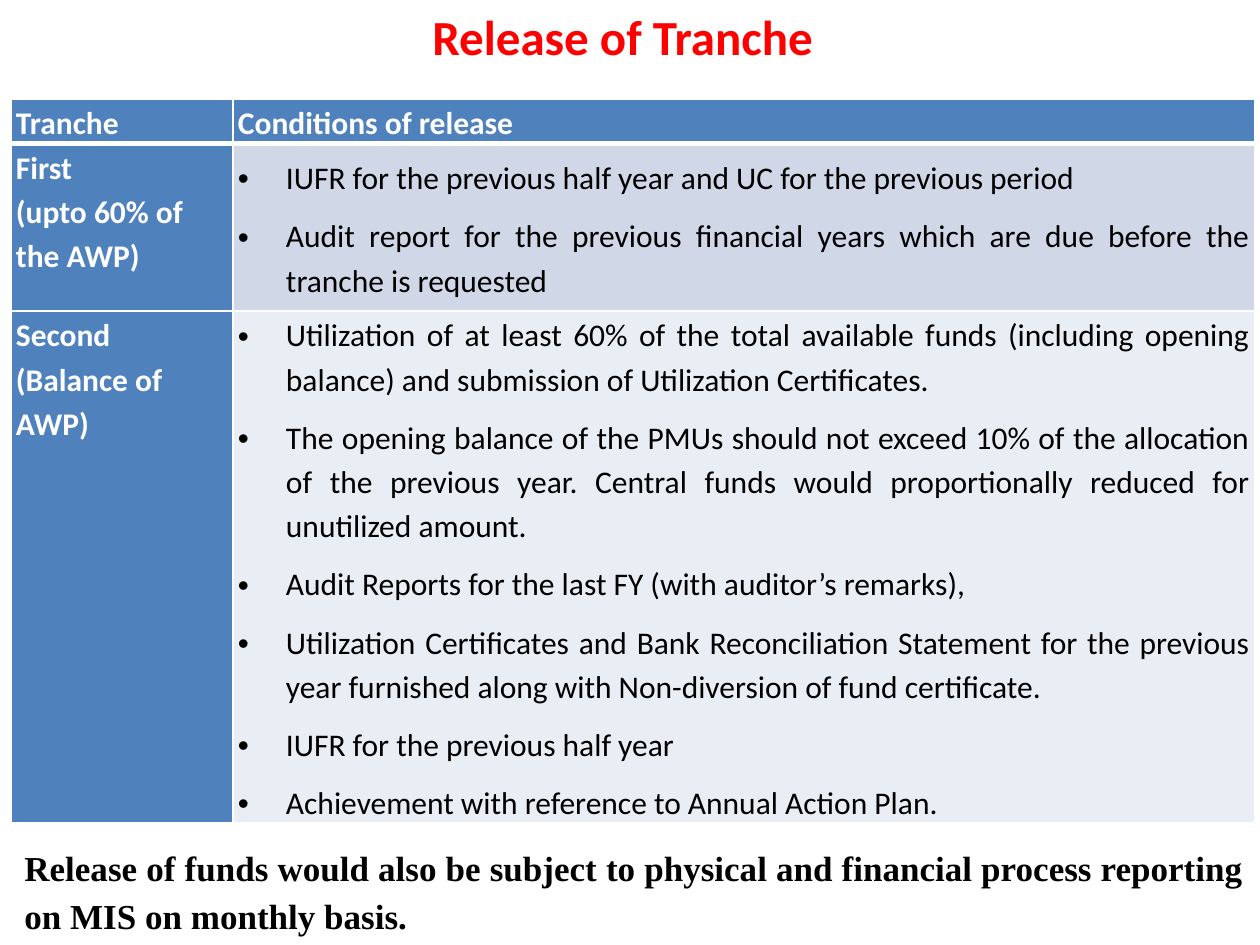
from dataclasses import dataclass
from typing import Any

from lxml.etree import SubElement
from pptx import Presentation
from pptx.dml.color import RGBColor
from pptx.enum.text import MSO_ANCHOR as Anchor, MSO_AUTO_SIZE as AutoSize, PP_ALIGN as Align
from pptx.oxml.ns import qn
from pptx.util import Emu, Pt

EMU_PER_PX = 914400 / 126


def px(length):
    return Emu(round(length * EMU_PER_PX))


def color(value):
    return RGBColor.from_string(value)


def apply(target, values):
    for name, value in values.items():
        setattr(target, name, value)


@dataclass
class TrancheSlide:
    slide: Any
    heading_font: str = "Calibri"
    note_font: str = "Times New Roman"
    header_fill: str = "4F81BD"
    white: str = "FFFFFF"
    black: str = "000000"
    red: str = "FF0000"

    def paragraphs(self, frame, lines, font, ink, layout, bullet=False):
        for index, line in enumerate(lines):
            para = frame.paragraphs[0] if index == 0 else frame.add_paragraph()
            apply(para, layout)
            if bullet:
                self.bullet(para)
            run = para.add_run()
            run.text = line
            apply(run.font, font)
            run.font.color.rgb = color(ink)

    def bullet(self, para):
        properties = para._p.get_or_add_pPr()
        properties.set("marL", str(px(48)))
        properties.set("indent", str(-px(48)))
        SubElement(properties, qn("a:buFont"), typeface="Arial")
        SubElement(properties, qn("a:buChar"), char="•")

    def title(self, text, left, top, width, height):
        heading = self.slide.shapes.title
        apply(heading, dict(left=px(left), top=px(top), width=px(width), height=px(height)))
        apply(heading.text_frame, dict(
            word_wrap=True, auto_size=AutoSize.NONE, vertical_anchor=Anchor.TOP))
        self.paragraphs(heading.text_frame, [text],
                        dict(name=self.heading_font, size=Pt(28), bold=True),
                        self.red, dict(alignment=Align.CENTER))

    def note(self, text, left, top, width, height):
        frame = self.slide.shapes.add_textbox(
            px(left), px(top), px(width), px(height)).text_frame
        apply(frame, dict(word_wrap=True, auto_size=AutoSize.SHAPE_TO_FIT_TEXT))
        self.paragraphs(frame, [text], dict(name=self.note_font, size=Pt(20), bold=True),
                        self.black, dict(alignment=Align.JUSTIFY, line_spacing=1.15))

    def borders(self, cell, widths):
        properties = cell._tc.get_or_add_tcPr()
        for side, width in widths.items():
            line = SubElement(properties, qn(f"a:ln{side}"), w=str(Pt(width)))
            fill = SubElement(line, qn("a:solidFill"))
            SubElement(fill, qn("a:srgbClr"), val=self.white)

    def cell(self, cell, lines, fill, ink, bold, layout, widths, anchor, bullet):
        apply(cell, dict(margin_left=px(5), margin_right=px(5), margin_top=0,
                         margin_bottom=0, vertical_anchor=anchor))
        self.borders(cell, widths)
        cell.fill.solid()
        cell.fill.fore_color.rgb = color(fill)
        self.paragraphs(cell.text_frame, lines,
                        dict(name=self.heading_font, size=Pt(18), bold=bold),
                        ink, layout, bullet)

    def table(self, rows, fills, left, top, widths, heights):
        grid = self.slide.shapes.add_table(
            len(rows), len(widths), px(left), px(top),
            px(sum(widths)), px(sum(heights))).table
        for column, width in zip(grid.columns, widths):
            column.width = px(width)
        for row, height in zip(grid.rows, heights):
            row.height = px(height)
        justified = dict(alignment=Align.JUSTIFY, line_spacing=1.15, space_after=Pt(8))
        for r, row in enumerate(rows):
            sides = dict(L=1, R=1, T=3 if r == 1 else 1, B=3 if r == 0 else 1)
            for c, lines in enumerate(row):
                is_condition = r > 0 and c == 1
                is_label = r > 0 and c == 0
                self.cell(
                    grid.cell(r, c), lines,
                    fill=fills[r - 1] if is_condition else self.header_fill,
                    ink=self.black if is_condition else self.white,
                    bold=not is_condition,
                    layout=dict(line_spacing=1.15) if is_label else justified,
                    widths=sides,
                    anchor=Anchor.MIDDLE if is_condition and r == 1 else Anchor.TOP,
                    bullet=is_condition)


TRANCHES = [
    (["Tranche"], ["Conditions of release"]),
    (["First", "(upto 60% of the AWP)"], [
        "IUFR for the previous half year and UC for the previous period",
        "Audit report for the previous financial years which are due before the "
        "tranche is requested",
    ]),
    (["Second (Balance of AWP)"], [
        "Utilization of at least 60% of the total available funds (including opening "
        "balance) and submission of Utilization Certificates.",
        "The opening balance of the PMUs should not exceed 10% of the allocation of the "
        "previous year. Central funds would proportionally reduced for unutilized amount.",
        "Audit Reports for the last FY (with auditor’s remarks),",
        "Utilization Certificates and Bank Reconciliation Statement for the previous "
        "year furnished along with Non-diversion of fund certificate.",
        "IUFR for the previous half year",
        "Achievement with reference to Annual Action Plan.",
    ]),
]


def main():
    deck = Presentation()
    apply(deck, dict(slide_width=px(1260), slide_height=px(945)))
    page = TrancheSlide(deck.slides.add_slide(deck.slide_layouts[5]))
    page.table(TRANCHES, ["D0D8E8", "E9EDF4"], 11, 99, [222, 1022], [43, 168, 511])
    page.note("Release of funds would also be subject to physical and financial process "
              "reporting on MIS on monthly basis.", 12, 834, 1244, 111)
    page.title("Release of Tranche", 10, 0, 1225, 72)
    deck.save("out.pptx")


if __name__ == "__main__":
    main()
